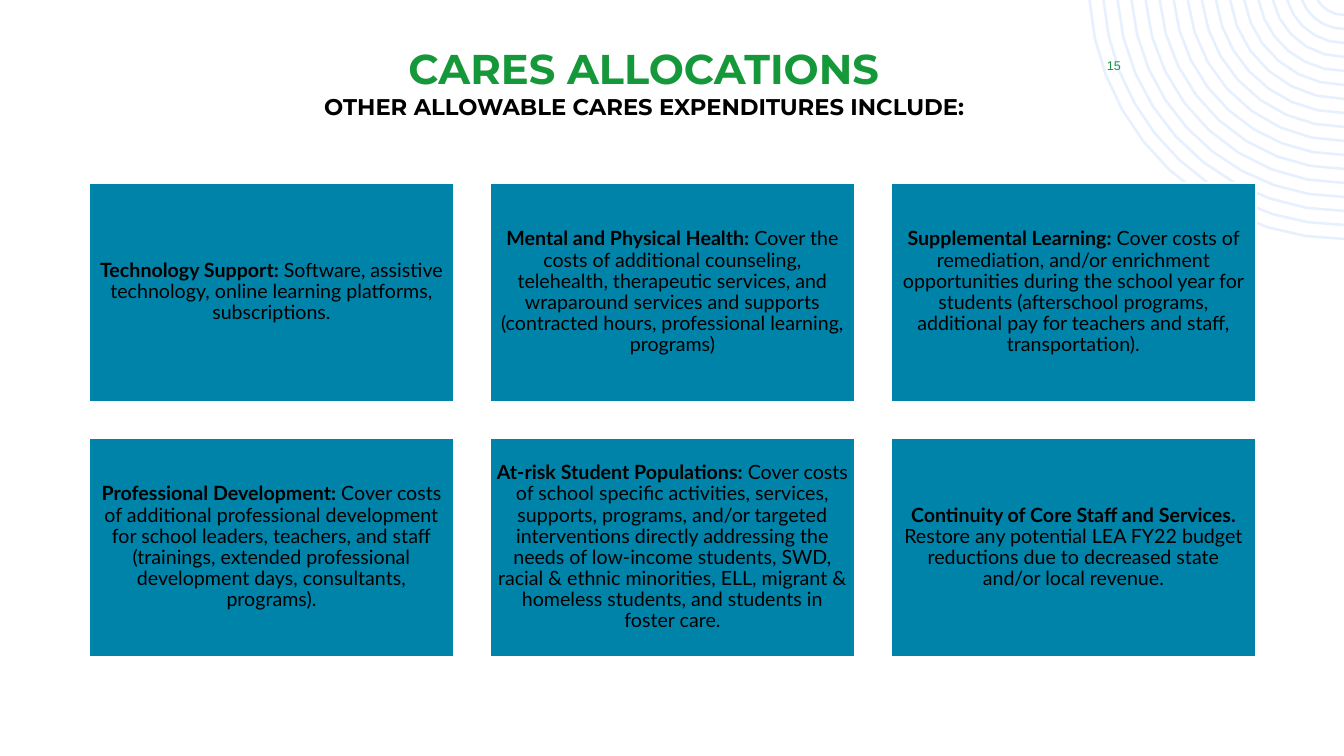
from dataclasses import dataclass
from math import asin, cos, pi, sin

from pptx import Presentation
from pptx.dml.color import RGBColor
from pptx.enum.shapes import MSO_SHAPE
from pptx.enum.text import MSO_ANCHOR, MSO_AUTO_SIZE, PP_ALIGN
from pptx.util import Emu, Pt

SCALE = 914400 / 100.8  # EMU in one px
WIDE, HIGH = 1344, 756


@dataclass(frozen=True)
class Theme:
    green: str = "159839"
    black: str = "000000"
    white: str = "FFFFFF"
    teal: str = "0083A9"
    pale: str = "E6F0FE"
    head: str = "Montserrat"
    body: str = "Lato"
    plain: str = "Arial"
    title: float = 29.7
    lead: float = 16.2
    text: float = 14
    small: float = 9


THEME = Theme()

CARDS = [
    ("Technology Support: ",
     "Software, assistive technology, online learning platforms, subscriptions."),
    ("Mental and Physical Health: ",
     "Cover the costs of additional counseling, telehealth, therapeutic services, "
     "and wraparound services and supports (contracted hours, professional "
     "learning, programs)"),
    ("Supplemental Learning: ",
     "Cover costs of remediation, and/or enrichment opportunities during the "
     "school year for students (afterschool programs, additional pay for teachers "
     "and staff, transportation)."),
    ("Professional Development: ",
     "Cover costs of additional professional development for school leaders, "
     "teachers, and staff (trainings, extended professional development days, "
     "consultants, programs)."),
    ("At-risk Student Populations: ",
     "Cover costs of school specific activities, services, supports, programs, "
     "and/or targeted interventions directly addressing the needs of low-income "
     "students, SWD, racial & ethnic minorities, ELL, migrant & homeless students, "
     "and students in foster care."),
    ("Continuity of Core Staff and Services. ",
     "Restore any potential LEA FY22 budget reductions due to decreased state "
     "and/or local revenue."),
]


def px(size):
    return Emu(round(size * SCALE))


def area(left, top, width, height):
    return px(left), px(top), px(width), px(height)


def color(code):
    return RGBColor.from_string(code)


def add_run(para, text, font, size, tint, bold=False):
    run = para.add_run()
    run.text = text
    run.font.name = font
    run.font.size = Pt(size)
    run.font.color.rgb = color(tint)
    run.font.bold = bold


def set_frame(shape, anchor, inset=None):
    """Prepare the text frame and return its centred paragraph."""
    frame = shape.text_frame
    frame.word_wrap = True
    frame.auto_size = MSO_AUTO_SIZE.NONE
    frame.vertical_anchor = anchor
    if inset is not None:
        frame.margin_left = frame.margin_right = px(inset)
        frame.margin_top = frame.margin_bottom = px(inset)
    para = frame.paragraphs[0]
    para.alignment = PP_ALIGN.CENTER
    return para


def add_rings(slide, mid_x, mid_y, first, step, count):
    """Draw concentric arcs from the top slide edge to the right one."""
    def arc(radius):
        start, parts = asin(-mid_y / radius), 4 + radius // 40
        turns = [start + (pi / 2 - start) * i / parts for i in range(parts + 1)]
        return [(px(mid_x - radius * cos(t)), px(mid_y + radius * sin(t)))
                for t in turns]

    arcs = [arc(first + step * i) for i in range(count)]
    pen = slide.shapes.build_freeform(*arcs[0][0])
    for i, dots in enumerate(arcs):
        if i:
            pen.move_to(*dots[0])
        pen.add_line_segments(dots[1:], close=False)
    rings = pen.convert_to_shape()
    rings.shadow.inherit = False
    rings.fill.background()
    rings.line.color.rgb = color(THEME.pale)
    rings.line.width = Pt(1.8)
    # Send behind the title
    slide.shapes._spTree.insert(2, rings._element)


def set_title(slide, box):
    title = slide.shapes.title
    title.left, title.top, title.width, title.height = box
    para = set_frame(title, MSO_ANCHOR.TOP)
    add_run(para, "CARES ALLOCATIONS", THEME.head, THEME.title, THEME.green, True)
    para.add_line_break()
    add_run(para, "OTHER ALLOWABLE CARES EXPENDITURES INCLUDE:",
            THEME.head, THEME.lead, THEME.black, True)


def add_number(slide, text, box):
    para = set_frame(slide.shapes.add_textbox(*box), MSO_ANCHOR.MIDDLE)
    add_run(para, text, THEME.plain, THEME.small, THEME.green)


def add_card(slide, name, text, box):
    card = slide.shapes.add_shape(MSO_SHAPE.RECTANGLE, *box)
    card.shadow.inherit = False
    card.fill.solid()
    card.fill.fore_color.rgb = color(THEME.teal)
    card.line.color.rgb = color(THEME.white)
    card.line.width = Pt(1.5)
    para = set_frame(card, MSO_ANCHOR.MIDDLE, 6)
    para.line_spacing = 0.9
    add_run(para, name, THEME.body, THEME.text, THEME.black, True)
    add_run(para, text, THEME.body, THEME.text, THEME.black)


def main():
    deck = Presentation()
    deck.slide_width, deck.slide_height = px(WIDE), px(HIGH)
    slide = deck.slides.add_slide(deck.slide_layouts[5])

    # Corner pattern
    add_rings(slide, WIDE, -16, first=31, step=14, count=17)

    # Heading and slide number
    set_title(slide, area(203, 38, 882, 85))
    add_number(slide, "15", area(1073, 50, 82, 30))

    # Grid of cards, three in a row
    for i, (name, text) in enumerate(CARDS):
        row, col = divmod(i, 3)
        add_card(slide, name, text,
                 area(89 + 401 * col, 183 + 255 * row, 365, 219))

    deck.save("out.pptx")


if __name__ == "__main__":
    main()
